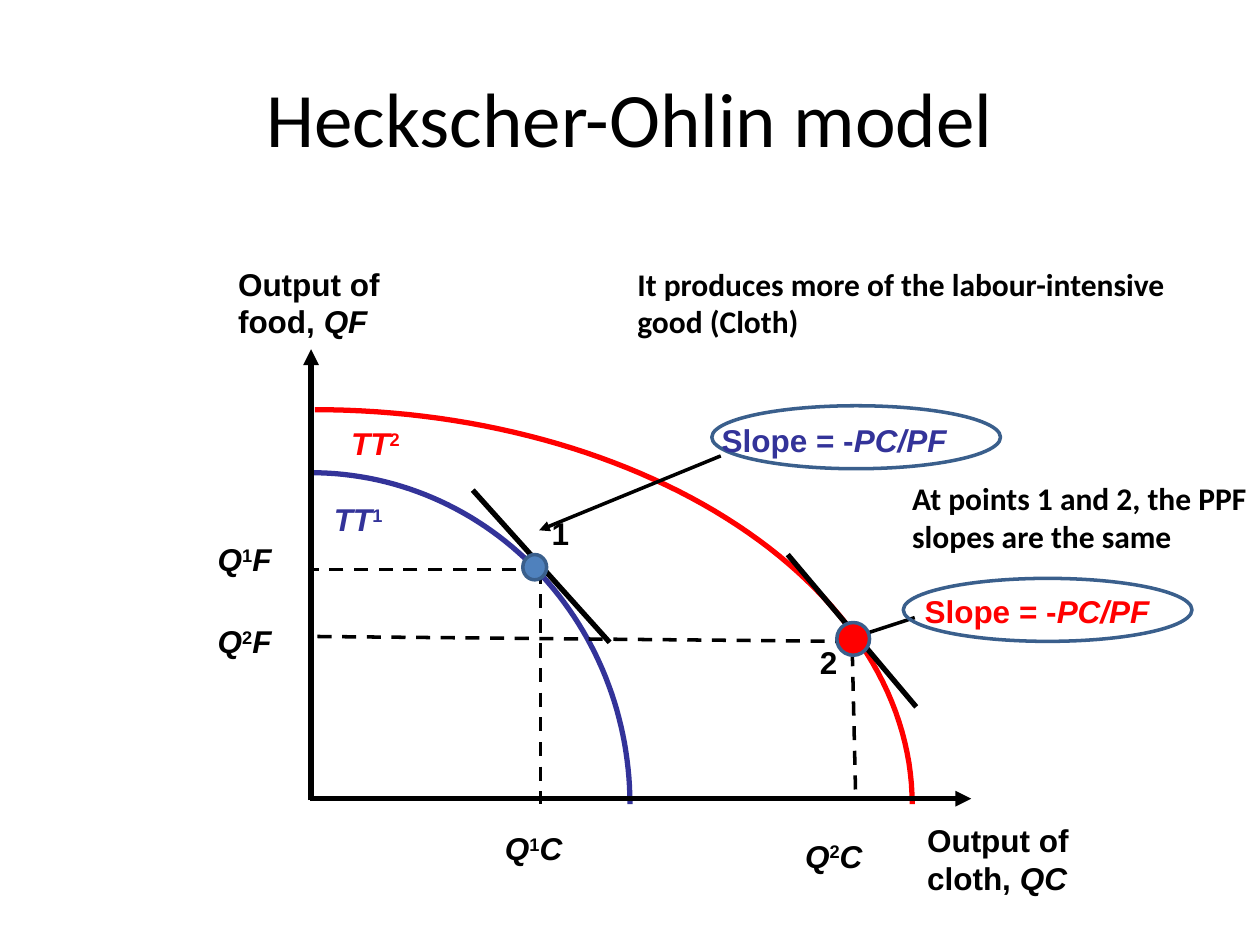
from dataclasses import dataclass
from math import cos, pi, sin

from lxml import etree
from pptx import Presentation
from pptx.dml.color import RGBColor
from pptx.enum.dml import MSO_LINE
from pptx.enum.shapes import MSO_CONNECTOR, MSO_SHAPE
from pptx.enum.text import MSO_ANCHOR, MSO_AUTO_SIZE, PP_ALIGN
from pptx.oxml.ns import qn
from pptx.util import Cm, Pt

BLACK = RGBColor(0x00, 0x00, 0x00)
RED = RGBColor(0xFF, 0x00, 0x00)
INDIGO = RGBColor(0x33, 0x33, 0x99)
BLUE = RGBColor(0x4F, 0x81, 0xBD)
STEEL = RGBColor(0x3A, 0x5F, 0x8C)
STRAIGHT = MSO_CONNECTOR.STRAIGHT
ELLIPSE = MSO_SHAPE.OVAL
DASH = MSO_LINE.DASH
MIDDLE = MSO_ANCHOR.MIDDLE
CENTER = PP_ALIGN.CENTER
LEFT = PP_ALIGN.LEFT
GROW = MSO_AUTO_SIZE.SHAPE_TO_FIT_TEXT
FIXED = MSO_AUTO_SIZE.NONE
CURVE_STEPS = 60
ROW = 1.02


@dataclass(frozen=True)
class Piece:
    text: str
    italic: bool = False
    raised: bool = False


@dataclass(frozen=True)
class Label:
    left: float
    top: float
    width: float
    height: float
    paragraphs: tuple[tuple[Piece, ...], ...]
    color: RGBColor = BLACK
    font: str = "Arial"
    size: int = 18
    bold: bool = True
    wrap: bool = True
    inset: float = 0.25
    align: PP_ALIGN = LEFT


@dataclass(frozen=True)
class Segment:
    start: tuple[float, float]
    end: tuple[float, float]
    weight: int
    arrow: bool = False
    dashed: bool = False


@dataclass(frozen=True)
class Frontier:
    left: float
    top: float
    width: float
    height: float
    color: RGBColor


@dataclass(frozen=True)
class Oval:
    left: float
    top: float
    width: float
    height: float
    fill: RGBColor | None = None


def quantity(index: str, good: str) -> tuple[tuple[Piece, ...], ...]:
    """Return the runs of an output level such as Q1F."""
    return ((Piece("Q", True), Piece(index, raised=True), Piece(good, True)),)


def frontier_name(index: str) -> tuple[tuple[Piece, ...], ...]:
    """Return the runs of a frontier name."""
    return ((Piece("TT", True), Piece(index, raised=True)),)


def axis_title(good: str, symbol: str) -> tuple[tuple[Piece, ...], ...]:
    """Return the two lines of an axis title."""
    return ((Piece("Output of"),), (Piece(f"{good}, "), Piece(symbol, True)))


def plain(text: str) -> tuple[tuple[Piece, ...], ...]:
    """Return a single upright paragraph."""
    return ((Piece(text),),)


SLOPE = ((Piece("Slope = -"), Piece("PC/PF", True)),)

TITLE = Label(1.27, 0.76, 22.86, 3.18, plain("Heckscher-Ohlin model"),
              font="Calibri", size=44, bold=False, align=CENTER)

FRONTIERS = (
    Frontier(6.27, 9.53, 6.43, 6.68, INDIGO),
    Frontier(6.35, 8.26, 12.04, 7.95, RED),
)

SEGMENTS = (
    Segment((6.27, 16.13), (6.27, 7.04), 3, arrow=True),
    Segment((6.25, 16.1), (19.58, 16.1), 3, arrow=True),
    Segment((18.44, 12.45), (17.12, 12.88), 2, arrow=True),
    Segment((14.53, 9.19), (10.87, 10.69), 2, arrow=True),
    Segment((10.9, 11.48), (10.9, 16.21), 2, dashed=True),
    Segment((10.9, 11.48), (6.32, 11.48), 2, dashed=True),
    Segment((17.12, 12.93), (6.32, 12.83), 2, dashed=True),
    Segment((17.17, 12.65), (17.25, 16.1), 2, dashed=True),
    Segment((9.53, 9.88), (12.29, 12.95), 3),
    Segment((15.88, 11.18), (18.47, 14.25), 3),
)

OVALS = (
    Oval(10.54, 11.18, 0.48, 0.51, BLUE),
    Oval(16.87, 12.55, 0.66, 0.66, RED),
    Oval(18.21, 11.66, 5.82, 1.27),
    Oval(14.35, 8.18, 5.82, 1.27),
)

LABELS = (
    Label(6.48, 9.96, 1.52, ROW, frontier_name("1"), INDIGO, wrap=False),
    Label(6.83, 8.43, 1.52, ROW, frontier_name("2"), RED, wrap=False),
    Label(4.55, 5.21, 3.61, 1.78, axis_title("food", "QF")),
    Label(18.44, 16.43, 3.81, 1.78, axis_title("cloth", "QC")),
    Label(18.39, 11.81, 5.28, ROW, SLOPE, RED),
    Label(14.3, 8.36, 5.64, ROW, SLOPE, INDIGO),
    Label(10.87, 10.24, 0.86, ROW, plain("1"), wrap=False),
    Label(16.28, 12.83, 0.86, ROW, plain("2"), wrap=False),
    Label(4.14, 10.77, 1.91, ROW, quantity("1", "F")),
    Label(4.14, 12.42, 1.7, ROW, quantity("2", "F")),
    Label(9.93, 16.59, 1.93, ROW, quantity("1", "C")),
    Label(15.98, 16.74, 1.96, ROW, quantity("2", "C")),
    Label(11.33, 5.21, 12.7, 1.8, font="Calibri", inset=1.52,
          paragraphs=plain("It produces more of the labour-intensive good (Cloth)")),
    Label(16.87, 9.53, 8.53, 1.8, font="Calibri", inset=1.52,
          paragraphs=plain("At points 1 and 2, the PPF slopes are the same")),
)


def draw_label(shapes, label: Label):
    """Add a text box run by run and return its text frame."""
    box = shapes.add_textbox(Cm(label.left), Cm(label.top), Cm(label.width), Cm(label.height))
    frame = box.text_frame
    frame.word_wrap, frame.auto_size = label.wrap, GROW
    frame.margin_left = Cm(label.inset)
    for index, pieces in enumerate(label.paragraphs):
        paragraph = frame.add_paragraph() if index else frame.paragraphs[0]
        paragraph.alignment = label.align
        for piece in pieces:
            run = paragraph.add_run()
            run.text = piece.text
            run.font.name, run.font.size = label.font, Pt(label.size)
            run.font.bold, run.font.italic = label.bold, piece.italic
            run.font.color.rgb = label.color
            if piece.raised:
                run._r.get_or_add_rPr().set("baseline", "30000")
    return frame


def draw_segment(shapes, segment: Segment) -> None:
    """Add a straight line, dashed or with an arrowhead at its end."""
    connector = shapes.add_connector(STRAIGHT, *map(Cm, segment.start + segment.end))
    connector.line.color.rgb, connector.line.width = BLACK, Pt(segment.weight)
    if segment.dashed:
        connector.line.dash_style = DASH
    if segment.arrow:
        etree.SubElement(connector.line._get_or_add_ln(), qn("a:tailEnd"), type="triangle")
    etree.SubElement(connector._element.spPr, qn("a:effectLst"))


def draw_frontier(shapes, frontier: Frontier) -> None:
    """Add a quarter ellipse bowed away from the origin."""
    angles = [pi / 2 * step / CURVE_STEPS for step in range(CURVE_STEPS + 1)]
    points = [(Cm(frontier.left + frontier.width * sin(angle)),
               Cm(frontier.top + frontier.height * (1 - cos(angle)))) for angle in angles]
    builder = shapes.build_freeform(*points[0])
    builder.add_line_segments(points[1:], close=False)
    curve = builder.convert_to_shape()
    curve.shadow.inherit = False
    curve.fill.background()
    curve.line.color.rgb, curve.line.width = frontier.color, Pt(3)


def draw_oval(shapes, oval: Oval) -> None:
    """Add an outlined ellipse, filled when it has a colour."""
    ellipse = shapes.add_shape(ELLIPSE, Cm(oval.left), Cm(oval.top), Cm(oval.width), Cm(oval.height))
    ellipse.shadow.inherit = False
    if oval.fill is None:
        ellipse.fill.background()
    else:
        ellipse.fill.solid()
        ellipse.fill.fore_color.rgb = oval.fill
    ellipse.line.color.rgb, ellipse.line.width = STEEL, Pt(2)


def main() -> None:
    """Build the slide and save it."""
    deck = Presentation()
    deck.slide_width, deck.slide_height = Cm(25.4), Cm(19.05)
    shapes = deck.slides.add_slide(deck.slide_layouts[6]).shapes
    title_frame = draw_label(shapes, TITLE)
    title_frame.auto_size, title_frame.vertical_anchor = FIXED, MIDDLE
    for items, draw in ((FRONTIERS, draw_frontier), (SEGMENTS, draw_segment),
                        (OVALS, draw_oval), (LABELS, draw_label)):
        for item in items:
            draw(shapes, item)
    deck.save("out.pptx")


if __name__ == "__main__":
    main()
